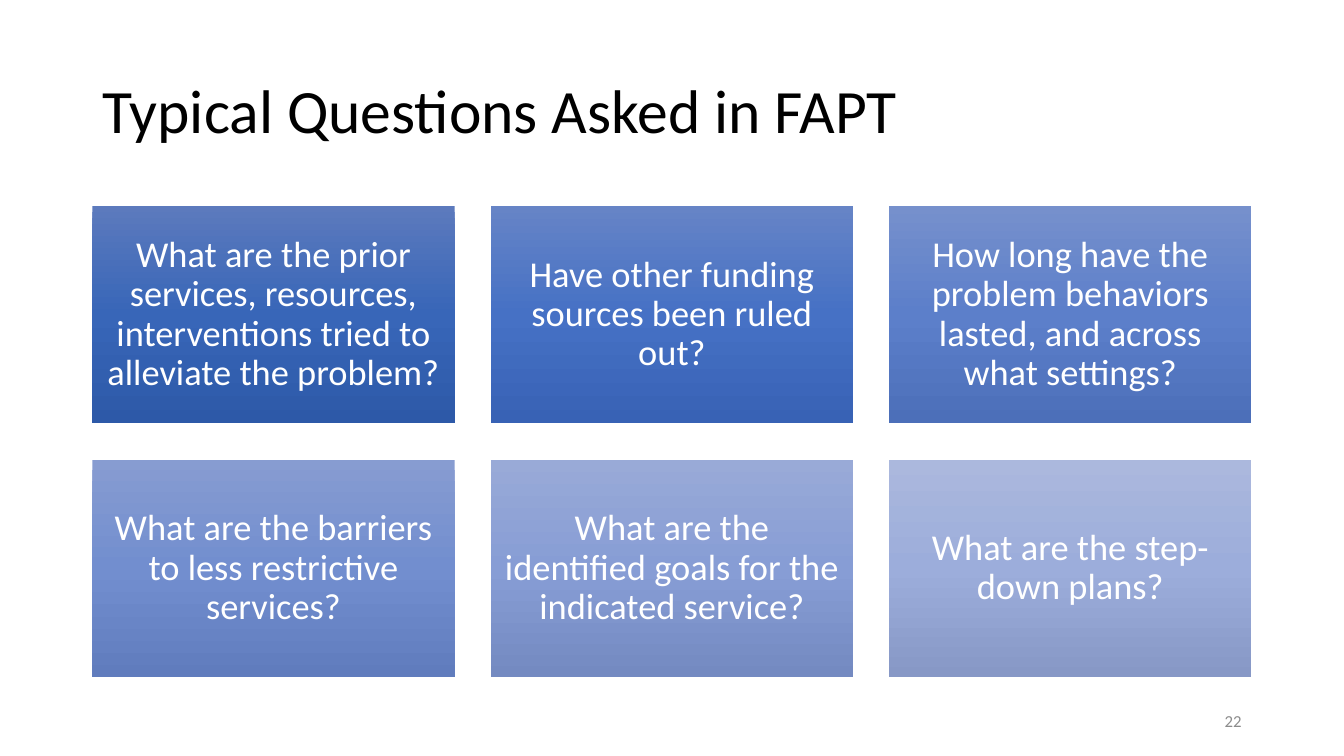
"""Build the slide of typical FAPT questions as a grid of shaded boxes."""
from copy import deepcopy

from pptx import Presentation
from pptx.dml.color import RGBColor
from pptx.enum.shapes import MSO_SHAPE
from pptx.enum.text import MSO_ANCHOR, PP_ALIGN
from pptx.util import Cm, Pt

TITLE = "Typical Questions Asked in FAPT"
PAGE_NUMBER = "22"
QUESTIONS = [
    ("What are the prior services, resources, interventions tried to alleviate the problem?",
     ("5C7ABD", "3866B8", "2D59A8")),
    ("Have other funding sources been ruled out?", ("6684C6", "4671C5", "3862B5")),
    ("How long have the problem behaviors lasted, and across what settings?",
     ("7690CC", "5C7FCA", "4C6FB9")),
    ("What are the barriers to less restrictive services?", ("879CD1", "728ECF", "607CBD")),
    ("What are the identified goals for the indicated service?",
     ("99AAD7", "879DD5", "748AC1")),
    ("What are the step-down plans?", ("ABB8DD", "9CADDB", "8798C6")),
]

FONT = "Calibri"
BLACK = RGBColor(0x00, 0x00, 0x00)
WHITE = RGBColor(0xFF, 0xFF, 0xFF)
GRAY = RGBColor(0x8C, 0x8C, 0x8C)

COLUMNS = 3
LEFT, TOP = 2.33, 5.19
BOX_WIDTH, BOX_HEIGHT = 9.13, 5.48
GAP = 0.91
INSET = Cm(0.27)


def write(shape, text, size, color, alignment, line_spacing=1.0):
    """Write one formatted paragraph, centred vertically in the shape."""
    frame = shape.text_frame
    frame.word_wrap = True
    frame.vertical_anchor = MSO_ANCHOR.MIDDLE
    para = frame.paragraphs[0]
    para.alignment = alignment
    para.line_spacing = line_spacing
    span = para.add_run()
    span.text = text
    span.font.name = FONT
    span.font.size = Pt(size)
    span.font.color.rgb = color


def shade(shape, colors):
    """Fill the shape with an even gradient from top to bottom."""
    shape.fill.gradient()
    shape.fill.gradient_angle = 270
    stop_list = shape.fill._fill._gradFill.gsLst
    stop_list.insert(1, deepcopy(stop_list[0]))
    for index, (stop, color) in enumerate(zip(shape.fill.gradient_stops, colors)):
        stop.position = index / (len(colors) - 1)
        stop.color.rgb = RGBColor.from_string(color)


def add_question(page, index, question, colors):
    """Add one question box at its place in the grid."""
    row, column = divmod(index, COLUMNS)
    box = page.shapes.add_shape(
        MSO_SHAPE.RECTANGLE,
        Cm(LEFT + column * (BOX_WIDTH + GAP)), Cm(TOP + row * (BOX_HEIGHT + GAP)),
        Cm(BOX_WIDTH), Cm(BOX_HEIGHT))
    box.shadow.inherit = False
    box.line.fill.background()
    shade(box, colors)
    frame = box.text_frame
    frame.margin_left = frame.margin_right = INSET
    frame.margin_top = frame.margin_bottom = INSET
    write(box, question, 26, WHITE, PP_ALIGN.CENTER, 0.9)


def main():
    """Create the deck and save it."""
    deck = Presentation()
    deck.slide_width, deck.slide_height = Cm(33.87), Cm(19.05)
    page = deck.slides.add_slide(deck.slide_layouts[5])

    title = page.shapes.title
    title.left, title.top = Cm(LEFT), Cm(1.01)
    title.width, title.height = Cm(29.21), Cm(3.68)
    write(title, TITLE, 44, BLACK, PP_ALIGN.LEFT, 0.9)

    for index, (question, colors) in enumerate(QUESTIONS):
        add_question(page, index, question, colors)

    number = page.shapes.add_textbox(Cm(23.92), Cm(17.66), Cm(7.62), Cm(1.01))
    write(number, PAGE_NUMBER, 12, GRAY, PP_ALIGN.RIGHT)

    deck.save("out.pptx")


if __name__ == "__main__":
    main()
